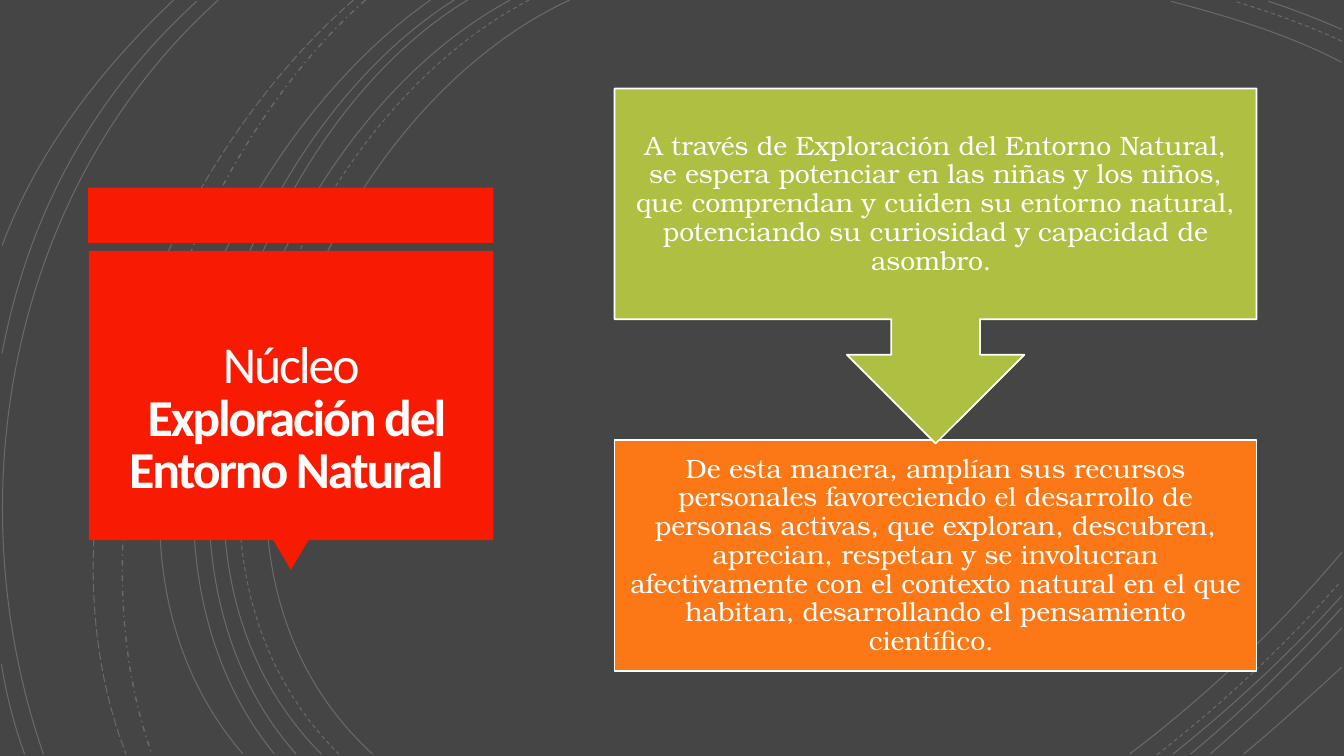
from lxml import etree
from pptx import Presentation
from pptx.dml.color import RGBColor
from pptx.enum.dml import MSO_LINE
from pptx.enum.shapes import MSO_SHAPE
from pptx.enum.text import MSO_ANCHOR, PP_ALIGN
from pptx.oxml.ns import qn
from pptx.util import Pt

GREY = RGBColor(0x45, 0x45, 0x45)
WHITE = RGBColor(0xFF, 0xFF, 0xFF)
CREAM = RGBColor(0xFF, 0xFE, 0xFF)
RED = RGBColor(0xF8, 0x1B, 0x02)
GREEN = RGBColor(0xAF, 0xBF, 0x41)
ORANGE = RGBColor(0xFC, 0x77, 0x15)
SOLID, DASH = MSO_LINE.SOLID, MSO_LINE.DASH
LONG, DOT = MSO_LINE.LONG_DASH, MSO_LINE.DASH_DOT
RECT, WEDGE = MSO_SHAPE.RECTANGLE, MSO_SHAPE.ISOSCELES_TRIANGLE
CALLOUT = MSO_SHAPE.UP_ARROW_CALLOUT
CENTER, MIDDLE = PP_ALIGN.CENTER, MSO_ANCHOR.MIDDLE

# Dash and Bezier points of each arc
ARCS = [
    (SOLID, (407, 0), (227, 83), (103, 389), (266, 538.5)),
    (SOLID, (958.5, 44.5), (920, 24.5), (877, 11.5), (836.5, 1)),
    (SOLID, (807, 538.5), (862, 497), (913.5, 448), (958.5, 394.5)),
    (DASH, (378, 0), (205, 90), (89, 387), (242, 538.5)),
    (DASH, (958.5, 29.5), (934, 18), (907, 8.5), (882, 1)),
    (DASH, (826.5, 539), (873.5, 502.5), (918, 461), (957.5, 415.5)),
    (SOLID, (364.5, 0), (194.5, 91.5), (79, 387), (229.5, 538.5)),
    (SOLID, (958.5, 21), (941, 13.5), (923.5, 6.5), (906, 1)),
    (SOLID, (838, 538.5), (880.5, 504.5), (921.5, 466.5), (958.5, 425.5)),
    (SOLID, (334, 0), (175.5, 96), (79, 389.5), (211.5, 538.5)),
    (SOLID, (850.5, 538.5), (888.5, 507), (924.5, 471.5), (958.5, 434)),
    (SOLID, (324.5, 0), (166.5, 99.5), (70, 384), (196, 538.5)),
    (SOLID, (864.5, 538.5), (897, 510.5), (929, 480), (958.5, 448.5)),
    (SOLID, (307.5, 0), (156, 106), (38, 381), (173.5, 538.5)),
    (SOLID, (888.5, 538.5), (912, 519), (935, 498), (958.5, 476.5)),
    (DOT, (261, 0), (126.5, 119.5), (47, 366.5), (108.5, 538.5)),
    (LONG, (252.5, 0), (113, 121.5), (21, 359.5), (90, 538.5)),
    (SOLID, (156, 0), (8, 133), (-33, 353), (31, 538.5)),
    (SOLID, (140.5, 1), (66, 69), (20, 154), (1.5, 252.5)),
    (SOLID, (1, 474), (4.5, 496), (10, 517.5), (17.5, 538.5)),
    (SOLID, (124, 0), (72, 49.5), (26.5, 108), (1.5, 175.5)),
]

AIM = ("A través de Exploración del Entorno Natural, se espera potenciar en "
       "las niñas y los niños, que comprendan y cuiden su entorno natural, "
       "potenciando su curiosidad y capacidad de asombro. ")
RESULT = ("De esta manera, amplían sus recursos personales favoreciendo el "
          "desarrollo de personas activas, que exploran, descubren, aprecian, "
          "respetan y se involucran afectivamente con el contexto natural en "
          "el que habitan, desarrollando el pensamiento científico. ")


class Deck:
    head = "Calibri"
    body = "TeX Gyre Bonum"

    def __init__(self, slide):
        self.shapes = slide.shapes
        fill = slide.background.fill
        fill.solid()
        fill.fore_color.rgb = GREY

    def arc(self, dash, *knots):
        """Draw a faint cubic curve through its four Bezier points."""
        first, *rest = [tuple(map(Pt, knot)) for knot in knots]
        pen = self.shapes.build_freeform(*first)
        pen.add_line_segments(rest, close=False)
        curve = pen.convert_to_shape()
        self.bend(curve)
        curve.shadow.inherit = False
        curve.fill.background()
        curve.line.width = Pt(1 if dash == DOT else 0.75)
        curve.line.color.rgb = WHITE
        curve.line.dash_style = dash
        tint = curve.line._get_or_add_ln().find(".//" + qn("a:srgbClr"))
        etree.SubElement(tint, qn("a:alpha"), val="20000")

    def bend(self, curve):
        """Turn the three straight segments into one cubic segment."""
        trace = curve._element.find(".//" + qn("a:path"))
        cubic = etree.SubElement(trace, qn("a:cubicBezTo"))
        for leg in trace.findall(qn("a:lnTo")):
            cubic.append(leg[0])
            trace.remove(leg)

    def block(self, kind, box, color, edge=False, turn=0):
        shape = self.shapes.add_shape(kind, *map(Pt, box))
        shape.shadow.inherit = False
        shape.rotation = turn
        shape.fill.solid()
        shape.fill.fore_color.rgb = color
        if edge:
            shape.line.color.rgb = WHITE
            shape.line.width = Pt(1.25)
        else:
            shape.line.fill.background()

    def frame(self, shape, pad, top, lead):
        """Set up a centred text frame and return its paragraph."""
        area = shape.text_frame
        area.word_wrap = True
        area.vertical_anchor = MIDDLE
        area.margin_left = area.margin_right = area.margin_bottom = Pt(pad)
        area.margin_top = Pt(top)
        para = area.paragraphs[0]
        para.alignment = CENTER
        para.line_spacing = lead
        return para

    def run(self, para, text, face, size, color, bold=False):
        run = para.add_run()
        run.text = text
        font = run.font
        font.name, font.size, font.bold = face, Pt(size), bold
        font.color.rgb = color
        return run

    def title(self, box, lines):
        shape = self.shapes.title
        shape.left, shape.top, shape.width, shape.height = map(Pt, box)
        self.shapes._spTree.append(shape._element)  # bring to front
        para = self.frame(shape, 18, 55, 0.85)
        for i, (text, bold) in enumerate(lines):
            if i:
                para.add_line_break()
            run = self.run(para, text, self.head, 37, CREAM, bold)
            run.font._element.set("spc", "-150")

    def label(self, box, text):
        para = self.frame(self.shapes.add_textbox(*map(Pt, box)),
                          10.8, 10.8, 0.9)
        self.run(para, text, self.body, 19, WHITE)


def main():
    prs = Presentation()
    prs.slide_width, prs.slide_height = Pt(960), Pt(540)
    deck = Deck(prs.slides.add_slide(prs.slide_layouts[5]))

    for arc in ARCS:
        deck.arc(*arc)

    deck.block(RECT, (63, 134, 289.5, 39.5), RED)
    deck.block(WEDGE, (195, 385.5, 25.5, 21.5), RED, turn=180)
    deck.block(RECT, (63.5, 179.25, 289, 206.5), RED)
    deck.title((70, 185, 276, 193.5),
               [("Núcleo", False), (" Exploración del Entorno Natural ", True)])

    left, wide, high = 439, 458.5, 165
    low, top = 314.5, 63.25
    deck.block(RECT, (left, low, wide, high), ORANGE, edge=True)
    deck.label((left, low, wide, high), RESULT)
    deck.block(CALLOUT, (left, top, wide, 253.5), GREEN, edge=True, turn=180)
    deck.label((left, top, wide, high), AIM)

    prs.save("out.pptx")


if __name__ == "__main__":
    main()
